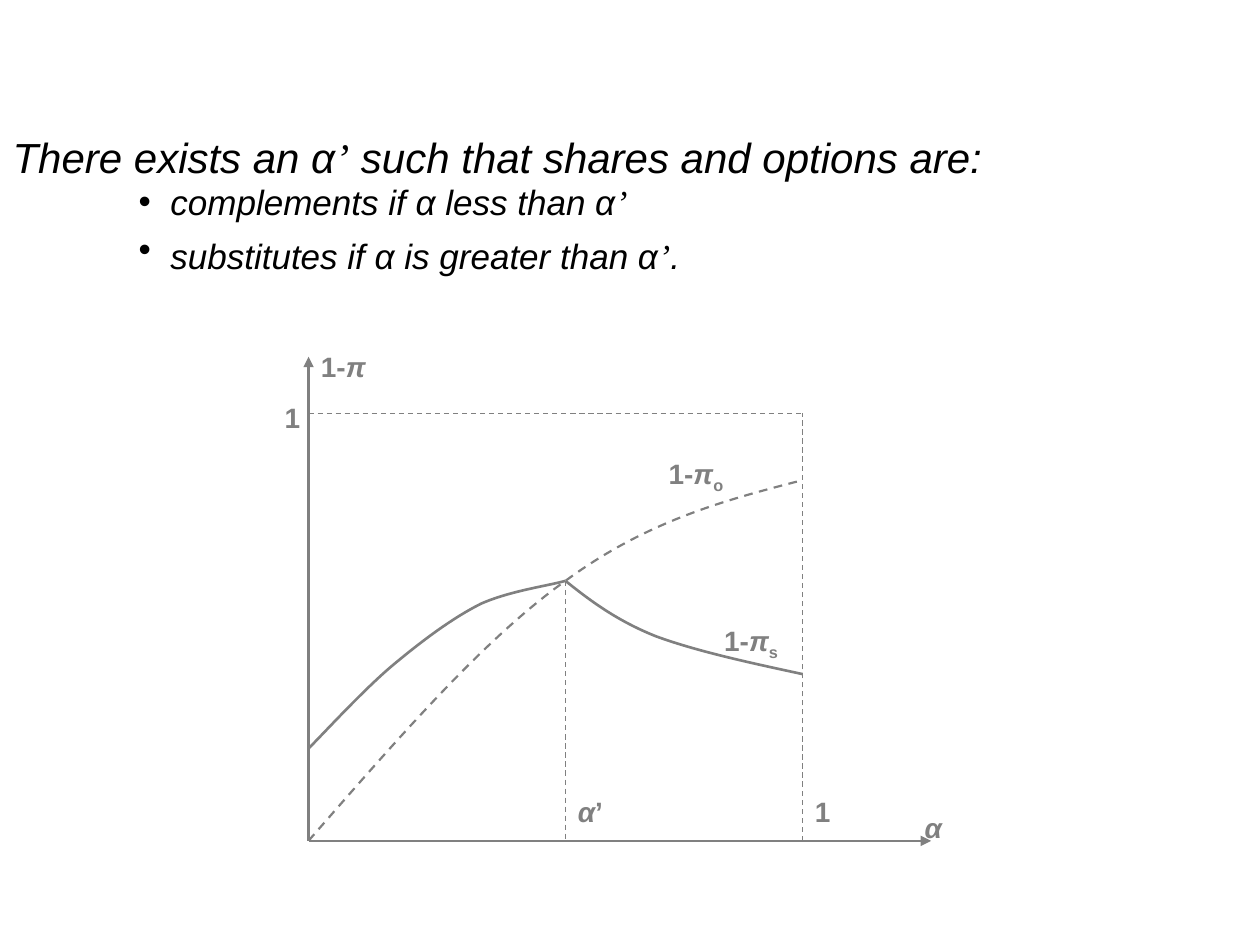
import pptx
import pptx.util
import pptx.dml.color
import pptx.enum.dml
import pptx.enum.shapes
import pptx.enum.text
import pptx.oxml.ns
import pptx.oxml.xmlchemy

Cm = pptx.util.Cm
Pt = pptx.util.Pt
qn = pptx.oxml.ns.qn
DASH = pptx.enum.dml.MSO_LINE.DASH
GRAY = pptx.dml.color.RGBColor(128, 128, 128)
BLACK = pptx.dml.color.RGBColor(0, 0, 0)

LEFT, MID, RIGHT = 6.22, 11.4, 16.18
BASE, PEAK, TOP = 16.95, 11.71, 8.33

PLAIN = {"name": "Arial", "size": Pt(16), "bold": True, "italic": False}
SLANT = PLAIN | {"italic": True}
LEAD = {"name": "Arial", "size": Pt(24), "italic": True}
ITEM = LEAD | {"size": Pt(20)}
ROMAN = {"name": "Times New Roman"}
TAIL = ITEM | {"size": Pt(28), "italic": False}


def style(obj, form):
    for key, value in form.items():
        setattr(obj, key, value)


def add_run(para, text, form, color, base=None):
    run = para.add_run()
    run.text = text
    style(run.font, form)
    run.font.color.rgb = color
    if base:
        run._r.get_or_add_rPr().set("baseline", str(base))


def add_sub(node, tag, **attrs):
    child = pptx.oxml.xmlchemy.OxmlElement(tag)
    for key, value in attrs.items():
        child.set(key, value)
    node.append(child)
    return child


def set_line(shape, width, dash=None):
    style(shape.line, {"width": Pt(width), "dash_style": dash})
    shape.line.color.rgb = GRAY


def add_line(group, start, end, width, dash=None, arrow=False):
    line = group.shapes.add_connector(
        pptx.enum.shapes.MSO_CONNECTOR.STRAIGHT, *map(Cm, start + end))
    set_line(line, width, dash)
    if arrow:
        add_sub(line.line._get_or_add_ln(), "a:tailEnd", type="triangle")
    add_sub(line._element.spPr, "a:effectLst")


def add_curve(group, points, width, dash=None):
    spots = [(Cm(x), Cm(y)) for x, y in points]
    pen = group.shapes.build_freeform(*spots[0])
    pen.add_line_segments(spots[1:], close=False)
    curve = pen.convert_to_shape()
    curve.shadow.inherit = False
    curve.fill.background()
    set_line(curve, width, dash)
    track = curve._element.find(".//" + qn("a:path"))
    steps = track.findall(qn("a:lnTo"))
    for i in range(0, len(steps), 3):
        bend = add_sub(track, "a:cubicBezTo")
        for step in steps[i:i + 3]:
            bend.append(step[0])
            track.remove(step)


def add_label(group, box, parts):
    frame = group.shapes.add_textbox(*map(Cm, box)).text_frame
    frame.word_wrap = True
    for part in parts:
        add_run(frame.paragraphs[0], part[0], part[1], GRAY, *part[2:])


def add_para(para, parts, level, left, hang, gap, bullet=None):
    props = para._p.get_or_add_pPr()
    props.set("marL", str(Cm(left)))
    props.set("indent", str(Cm(-hang)))
    if bullet:
        add_sub(props, "a:buChar", char=bullet)
    else:
        add_sub(props, "a:buNone")
    style(para, {"level": level, "line_spacing": 0.8, "space_before": Pt(gap)})
    for text, form in parts:
        add_run(para, text, form, BLACK)


def add_body(slide):
    body = slide.placeholders[1]
    style(body, {"left": Cm(0), "top": Cm(2.72),
                 "width": Cm(25.4), "height": Cm(4.47)})
    frame = body.text_frame
    style(frame, {"word_wrap": True,
                  "auto_size": pptx.enum.text.MSO_AUTO_SIZE.NONE,
                  "vertical_anchor": pptx.enum.text.MSO_ANCHOR.TOP})
    add_para(frame.paragraphs[0], [
        ("There exists an α", LEAD), ("’", LEAD | ROMAN),
        (" such that shares and options are:", LEAD)], 0, 0.95, 0.95, 0)
    mark = ("’", ITEM | ROMAN)
    items = [
        ([("complements if α less than α", ITEM), mark], 4),
        ([("substitutes if α is greater than α", ITEM), mark,
          (".", ITEM), (" ", TAIL)], 5.6)]
    for parts, gap in items:
        add_para(frame.add_paragraph(), parts, 2, 3.18, 0.64, gap, "•")


def add_graph(slide):
    group = slide.shapes.add_group_shape()
    for end in [(18.77, BASE), (LEFT, 7.19)]:
        add_line(group, (LEFT, BASE), end, 1.5, arrow=True)
    for start, end in [((RIGHT, BASE), (RIGHT, TOP)),
                       ((LEFT, TOP), (RIGHT, TOP)),
                       ((MID, PEAK), (MID, BASE))]:
        add_line(group, start, end, 0.75, DASH)

    rise = [(LEFT, 15.09), (6.53, 14.78), (7.39, 13.84), (7.98, 13.36),
            (8.56, 12.88), (9.14, 12.45), (9.7, 12.17),
            (10.29, 11.91), (11.05, 11.81), (MID, PEAK)]
    fall = [(MID, PEAK), (11.91, 12.12), (12.45, 12.52), (13.23, 12.83),
            (14.05, 13.13), (15.11, 13.36), (RIGHT, 13.59)]
    option = [(LEFT, BASE), (7.98, 14.94), (9.73, 12.9), (MID, PEAK),
              (13.06, 10.49), (14.63, 10.08), (RIGHT, 9.68)]
    add_curve(group, rise, 1.5)
    add_curve(group, fall, 1.5)
    add_curve(group, option, 1.25, DASH)

    one = [("1", PLAIN)]
    prob = [("1-", PLAIN), ("π", SLANT)]
    labels = [
        ((18.39, 16.21, 1.12, 1.12), [("α", SLANT)]),
        ((5.49, 7.95, 0.74, 1.12), one),
        ((RIGHT, 15.9, 0.74, 0.81), one),
        ((MID, 15.9, 1.47, 1.12), [("α", SLANT), ("’", PLAIN)]),
        ((13.23, 9.07, 2.95, 3), prob + [("o", PLAIN, -25000)]),
        ((14.35, 12.45, 2.59, 1.12), prob + [("s", PLAIN, -25000)]),
        ((LEFT, 6.93, 4.8, 1.12), prob)]
    for box, parts in labels:
        add_label(group, box, parts)


def main():
    deck = pptx.Presentation()
    style(deck, {"slide_width": Cm(25.4), "slide_height": Cm(19.05)})
    slide = deck.slides.add_slide(deck.slide_layouts[1])
    title = slide.shapes.title._element
    title.getparent().remove(title)
    add_body(slide)
    add_graph(slide)
    deck.save("out.pptx")


if __name__ == "__main__":
    main()
